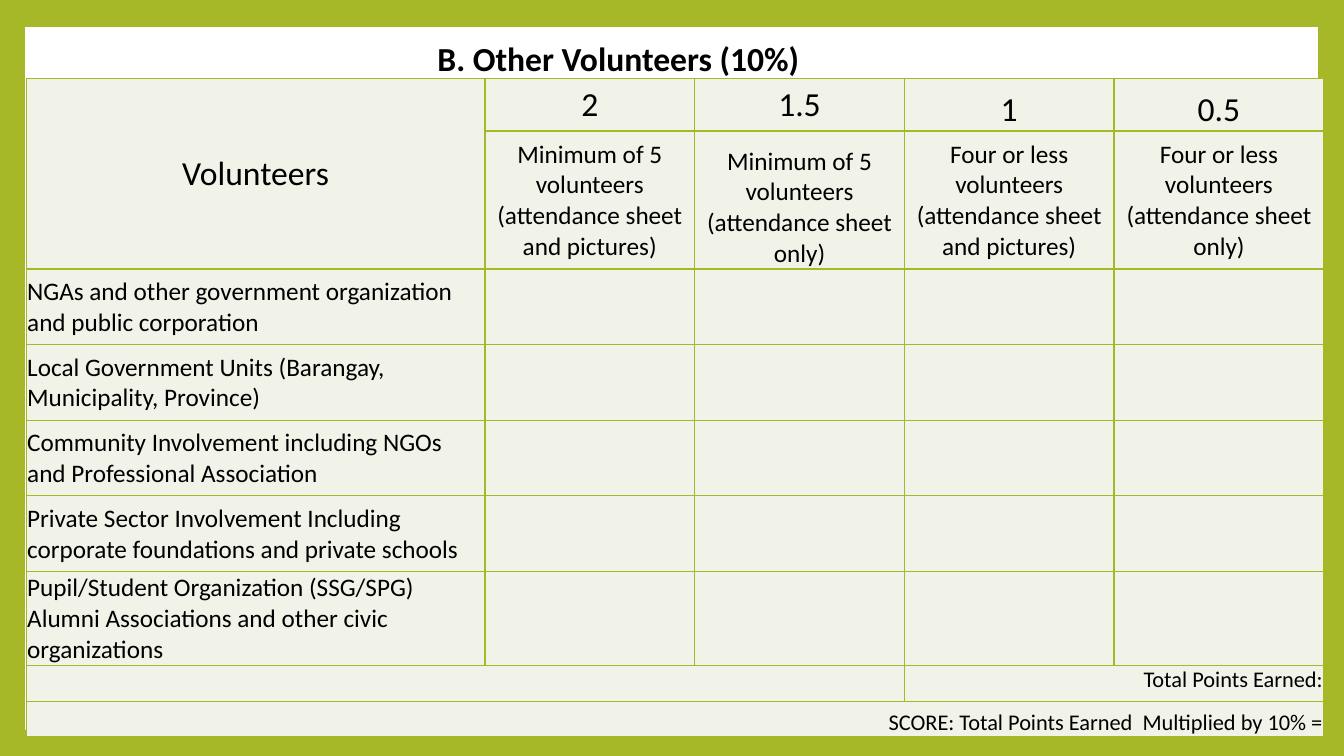
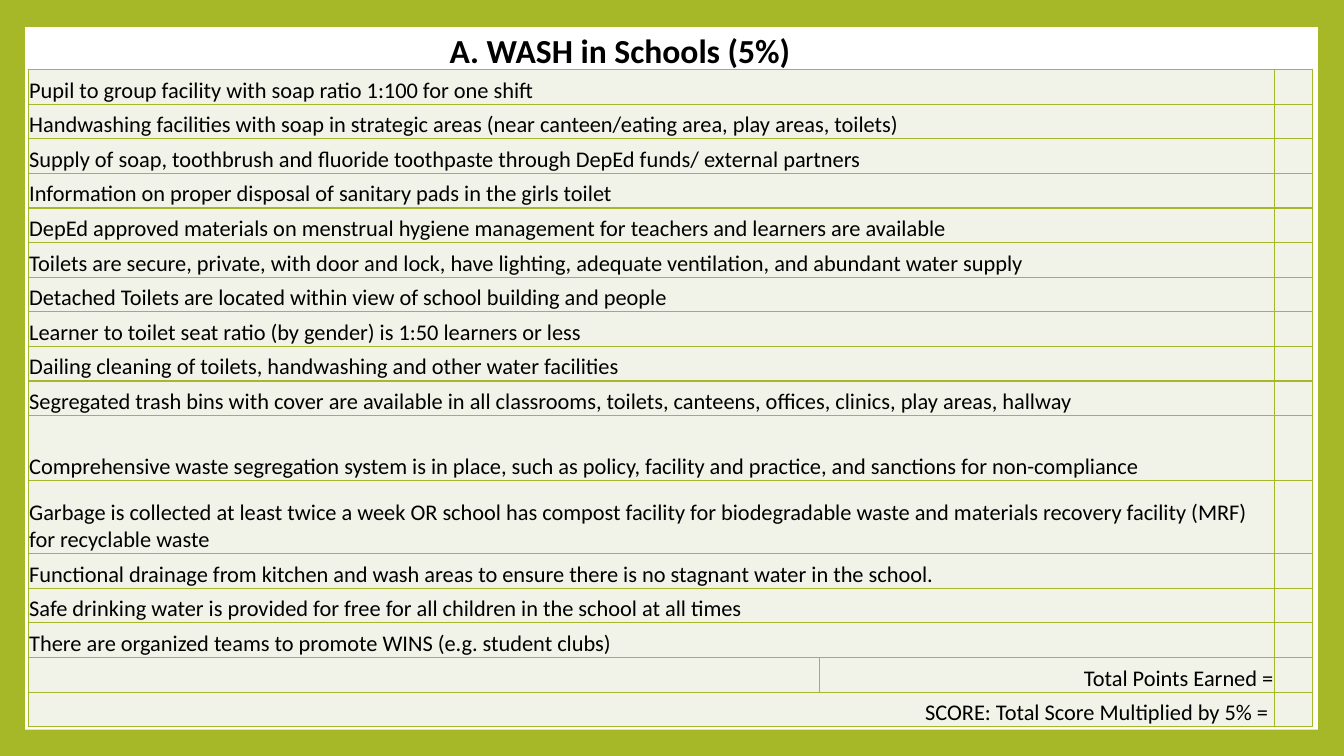
import pptx
import pptx.util
import pptx.dml.color
import pptx.enum.shapes
import pptx.enum.text
import pptx.oxml
import pptx.oxml.ns

Inches = pptx.util.Inches
Pt = pptx.util.Pt
RGBColor = pptx.dml.color.RGBColor
ALIGN = pptx.enum.text.PP_ALIGN
ANCHOR = pptx.enum.text.MSO_ANCHOR

GREEN = RGBColor(0xA6, 0xB7, 0x27)
PALE = RGBColor(0xF1, 0xF3, 0xE8)
WHITE = RGBColor(0xFF, 0xFF, 0xFF)
BLACK = RGBColor(0x00, 0x00, 0x00)
FONT = "Calibri"
SCORE_ROW = 0.35

RATINGS = [
    ("2", "Minimum of 5 volunteers (attendance sheet and pictures)"),
    ("1.5", "Minimum of 5 volunteers (attendance sheet only)"),
    ("1", "Four or less volunteers (attendance sheet and pictures)"),
    ("0.5", "Four or less volunteers (attendance sheet only)"),
]
VOLUNTEERS = [
    "NGAs and other government organization and public corporation",
    "Local Government Units (Barangay, Municipality, Province)",
    "Community Involvement including NGOs and Professional Association",
    "Private Sector Involvement Including corporate foundations and private schools",
    "Pupil/Student Organization (SSG/SPG) Alumni Associations and other civic organizations",
]
WASH_ITEMS = [
    "Pupil to group facility with soap ratio 1:100 for one shift",
    "Handwashing facilities with soap in strategic areas (near canteen/eating area, play areas, toilets)",
    "Supply of soap, toothbrush and fluoride toothpaste through DepEd funds/ external partners",
    "Information on proper disposal of sanitary pads in the girls toilet",
    "DepEd approved materials on menstrual hygiene management for teachers and learners are available",
    "Toilets are secure, private, with door and lock, have lighting, adequate ventilation, and abundant water supply",
    "Detached Toilets are located within view of school building and people",
    "Learner to toilet seat ratio (by gender) is 1:50 learners or less",
    "Dailing cleaning of toilets, handwashing and other water facilities",
    "Segregated trash bins with cover are available in all classrooms, toilets, canteens, offices, clinics, "
    "play areas, hallway",
    "Comprehensive waste segregation system is in place, such as policy, facility and practice, "
    "and sanctions for non-compliance",
    "Garbage is collected at least twice a week OR school has compost facility for biodegradable waste "
    "and materials recovery facility (MRF) for recyclable waste",
    "Functional drainage from kitchen and wash areas to ensure there is no stagnant water in the school.",
    "Safe drinking water is provided for free for all children in the school at all times",
    "There are organized teams to promote WINS (e.g. student clubs)",
]


def set_font(p, size, bold=False):
    p.font.name = FONT
    p.font.size = Pt(size)
    p.font.bold = bold
    p.font.color.rgb = BLACK


def add_slide(prs, title, left, top):
    s = prs.slides.add_slide(prs.slide_layouts[6])
    s.background.fill.solid()
    s.background.fill.fore_color.rgb = GREEN
    panel = s.shapes.add_shape(
        pptx.enum.shapes.MSO_SHAPE.RECTANGLE,
        Inches(0.25), Inches(0.27), Inches(12.82), Inches(6.97))
    panel.shadow.inherit = False
    panel.fill.solid()
    panel.fill.fore_color.rgb = WHITE
    panel.line.fill.background()
    tf = s.shapes.add_textbox(Inches(left), Inches(top), Inches(3.95), Inches(0.39)).text_frame
    tf.word_wrap = True
    tf.vertical_anchor = ANCHOR.MIDDLE
    p = tf.paragraphs[0]
    p.text = title
    p.space_before = Pt(4.8)
    p.space_after = Pt(6)
    set_font(p, 24, bold=True)
    return s


def add_borders(cell):
    tcPr = cell._tc.get_or_add_tcPr()
    for side in ("lnL", "lnR", "lnT", "lnB"):
        tcPr.append(pptx.oxml.parse_xml(
            f'<a:{side} {pptx.oxml.ns.nsdecls("a")} w="12700"><a:solidFill>'
            f'<a:srgbClr val="{GREEN}"/></a:solidFill></a:{side}>'))


def write_cell(cell, text, size, align=ALIGN.LEFT, anchor=ANCHOR.MIDDLE):
    cell.vertical_anchor = anchor
    p = cell.text_frame.paragraphs[0]
    p.text = text
    p.alignment = align
    set_font(p, size)


def add_grid(s, left, top, cols, rows):
    frame = s.shapes.add_table(
        len(rows), len(cols), Inches(left), Inches(top), Inches(sum(cols)), Inches(sum(rows)))
    table = frame.table
    table.first_row = False
    table.horz_banding = False
    for col, width in zip(table.columns, cols):
        col.width = Inches(width)
    for row, height in zip(table.rows, rows):
        row.height = Inches(height)
    for cell in table.iter_cells():
        cell.margin_left = cell.margin_right = cell.margin_top = Inches(0.01)
        cell.margin_bottom = 0
        add_borders(cell)
        cell.fill.solid()
        cell.fill.fore_color.rgb = PALE
        write_cell(cell, "", 16)
    return table


def merge(table, first, last):
    table.cell(*first).merge(table.cell(*last))


def volunteers_slide(prs):
    s = add_slide(prs, "B. Other Volunteers (10%)", 4.24, 0.38)
    rows = [0.52, 1.37] + [0.75] * 4 + [0.93, 0.36, SCORE_ROW]
    table = add_grid(s, 0.26, 0.78, [4.55] + [2.08] * 4, rows)
    for first, last in (((0, 0), (1, 0)), ((7, 0), (7, 2)), ((7, 3), (7, 4)), ((8, 0), (8, 4))):
        merge(table, first, last)
    write_cell(table.cell(0, 0), "Volunteers", 24, ALIGN.CENTER)
    for col, (points, rule) in enumerate(RATINGS, 1):
        points_anchor = ANCHOR.BOTTOM if col > 2 else ANCHOR.MIDDLE
        rule_anchor = ANCHOR.BOTTOM if col == 2 else ANCHOR.MIDDLE
        write_cell(table.cell(0, col), points, 24, ALIGN.CENTER, points_anchor)
        write_cell(table.cell(1, col), rule, 18, ALIGN.CENTER, rule_anchor)
    for row, group in enumerate(VOLUNTEERS, 2):
        write_cell(table.cell(row, 0), group, 18)
    write_cell(table.cell(7, 3), "Total Points Earned:", 16, ALIGN.RIGHT, ANCHOR.TOP)
    write_cell(table.cell(8, 0), "SCORE: Total Points Earned  Multiplied by 10% =", 16,
               ALIGN.RIGHT, ANCHOR.BOTTOM)


def wash_slide(prs):
    s = add_slide(prs, "A. WASH in Schools (5%)", 4.36, 0.3)
    tall_rows = {10: 0.64, 11: 0.73}
    total = len(WASH_ITEMS)
    score = total + 1
    row_height = (6.52 - sum(tall_rows.values())) / (score + 1 - len(tall_rows))
    rows = [tall_rows.get(row, row_height) for row in range(score + 1)]
    table = add_grid(s, 0.28, 0.69, [7.85, 4.51, 0.38], rows)
    for row, item in enumerate(WASH_ITEMS):
        merge(table, (row, 0), (row, 1))
        write_cell(table.cell(row, 0), item, 16, anchor=ANCHOR.BOTTOM)
    merge(table, (score, 0), (score, 1))
    write_cell(table.cell(total, 1), "Total Points Earned =", 16, ALIGN.RIGHT, ANCHOR.BOTTOM)
    write_cell(table.cell(score, 0), "SCORE: Total Score Multiplied by 5% = ", 16,
               ALIGN.RIGHT, ANCHOR.BOTTOM)


def main():
    prs = pptx.Presentation()
    prs.slide_width = Inches(13.33)
    prs.slide_height = Inches(7.5)
    volunteers_slide(prs)
    wash_slide(prs)
    prs.save("out.pptx")


if __name__ == "__main__":
    main()
